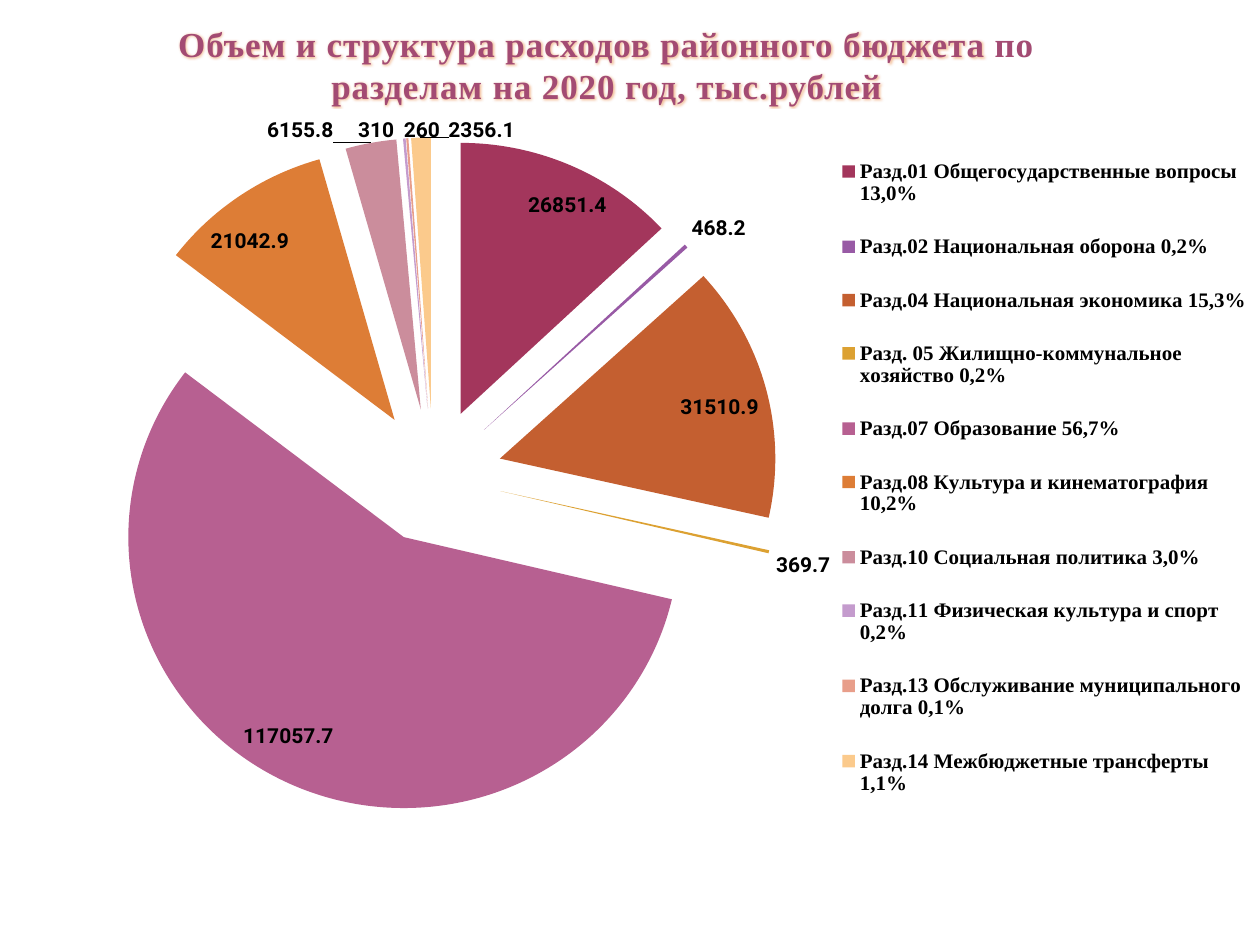
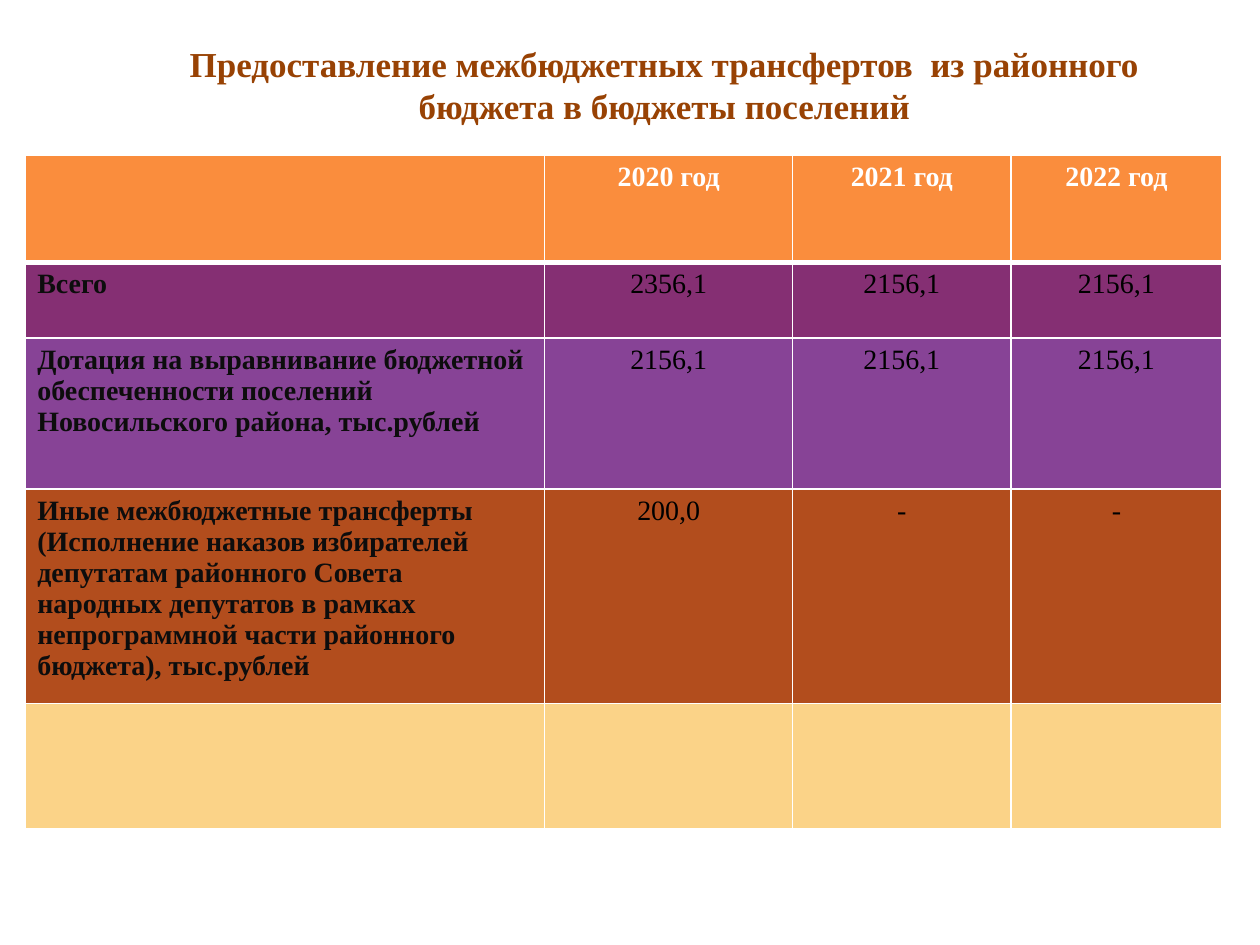
from pptx import Presentation
from pptx.chart.data import CategoryChartData
from pptx.dml.color import RGBColor
from pptx.enum.chart import XL_CHART_TYPE, XL_LABEL_POSITION, XL_LEGEND_POSITION
from pptx.enum.text import MSO_AUTO_SIZE, PP_ALIGN
from pptx.oxml import parse_xml
from pptx.oxml.ns import nsdecls, qn
from pptx.util import Cm, Pt

SERIF = "Times New Roman"
SANS = "Roboto"
WHITE, BLACK, DARK = "FFFFFF", "000000", "0D0D0D"

PARTS = [
    ("Разд.01 Общегосударственные вопросы 13,0%", 26851.4, "A3365C"),
    ("Разд.02 Национальная оборона 0,2%", 468.2, "985AA5"),
    ("Разд.04 Национальная экономика 15,3%", 31510.9, "C45F30"),
    ("Разд. 05 Жилищно-коммунальное хозяйство 0,2%", 369.7, "DCA132"),
    ("Разд.07 Образование 56,7%", 117057.7, "B76091"),
    ("Разд.08 Культура и кинематография 10,2%", 21042.9, "DD7D36"),
    ("Разд.10 Социальная политика 3,0%", 6155.8, "CB8D9C"),
    ("Разд.11 Физическая культура и спорт 0,2%", 310, "C49BCD"),
    ("Разд.13 Обслуживание муниципального долга 0,1%", 260, "E89E8A"),
    ("Разд.14 Межбюджетные трансферты 1,1%", 2356.1, "FBCA8C"),
]

ROWS = [
    (2.16, "FA8D3D", ["", "2020 год", "2021 год", "2022 год"]),
    (1.52, "852F73", ["Всего", "2356,1", "2156,1", "2156,1"]),
    (3.05, "874396", ["Дотация на выравнивание бюджетной обеспеченности поселений "
                      "Новосильского района, тыс.рублей", "2156,1", "2156,1", "2156,1"]),
    (4.3, "B24D1D", ["Иные межбюджетные трансферты (Исполнение наказов избирателей "
                     "депутатам районного Совета народных депутатов в рамках "
                     "непрограммной части районного бюджета), тыс.рублей",
                     "200,0", "-", "-"]),
    (2.53, "FBD388", ["", "", "", ""]),
]
WIDTHS = [10.48, 5, 4.4, 4.25]


def rgb(code):
    return RGBColor.from_string(code)


def line(tag, code, width):
    return parse_xml(
        f'<a:{tag} {nsdecls("a")} w="{Pt(width)}"><a:solidFill>'
        f'<a:srgbClr val="{code}"/></a:solidFill></a:{tag}>')


def place(x, y, w, h, inner=False):
    target = '<c:layoutTarget val="inner"/>' if inner else ""
    return parse_xml(
        f'<c:layout {nsdecls("c")}><c:manualLayout>{target}'
        f'<c:xMode val="edge"/><c:yMode val="edge"/><c:x val="{x}"/>'
        f'<c:y val="{y}"/><c:w val="{w}"/><c:h val="{h}"/>'
        '</c:manualLayout></c:layout>')


class Deck:
    def __init__(self):
        self.file = Presentation()
        self.file.slide_width, self.file.slide_height = Cm(25.4), Cm(19.05)
        self.slide = None

    def page(self):
        self.slide = self.file.slides.add_slide(self.file.slide_layouts[6])

    def style(self, font, size, code, bold, face=SERIF):
        font.name, font.size, font.bold = face, Pt(size), bold
        font.color.rgb = rgb(code)

    def title(self, text, top, width, code, edge, weight, glow=False):
        frame = self.slide.shapes.add_textbox(
            Cm(2.69), Cm(top), Cm(width), Cm(1.96)).text_frame
        frame.word_wrap = True
        frame.auto_size = MSO_AUTO_SIZE.SHAPE_TO_FIT_TEXT
        frame.text = text
        para = frame.paragraphs[0]
        para.alignment = PP_ALIGN.CENTER
        run = para.runs[0]
        self.style(run.font, 20, code, True)
        props = run.font._element
        props.insert(0, line("ln", edge, weight))
        if glow:
            props.set("spc", "50")
            props.insert(2, parse_xml(
                f'<a:effectLst {nsdecls("a")}><a:glow rad="45500">'
                f'<a:srgbClr val="{edge}"><a:alpha val="50000"/></a:srgbClr>'
                '</a:glow></a:effectLst>'))

    def pie(self, parts, left, top, width, height):
        data = CategoryChartData()
        data.categories = [name for name, _, _ in parts]
        data.add_series("Series 1", [value for _, value, _ in parts])
        chart = self.slide.shapes.add_chart(
            XL_CHART_TYPE.PIE, Cm(left), Cm(top), Cm(width), Cm(height), data).chart
        chart.has_title = False
        self.style(chart.font, 18, BLACK, False, SANS)
        area = chart._chartSpace.chart.plotArea
        for old in area.findall(qn("c:layout")):
            area.remove(old)
        area.insert(0, place(0, 0.026, 0.661, 0.914, True))
        self.legend(chart)
        plot = chart.plots[0]
        plot.vary_by_categories = True
        row = plot.series[0]
        for i, (_, _, code) in enumerate(parts):
            fill = row.points[i].format.fill
            fill.solid()
            fill.fore_color.rgb = rgb(code)
        row._element.find(qn("c:dPt")).addprevious(
            parse_xml(f'<c:explosion {nsdecls("c")} val="25"/>'))
        labels = row.data_labels
        labels.show_value = True
        labels.number_format, labels.number_format_is_linked = "General", False
        labels.position = XL_LABEL_POSITION.BEST_FIT
        self.style(labels.font, 12, BLACK, True, SANS)

    def legend(self, chart):
        chart.has_legend = True
        legend = chart.legend
        legend.position = XL_LEGEND_POSITION.RIGHT
        legend.include_in_layout = False
        self.style(legend.font, 12, BLACK, True)
        legend._element.find(qn("c:legendPos")).addnext(place(0.67, 0.015, 0.33, 0.94))

    def table(self, rows, widths, left, top):
        grid = self.slide.shapes.add_table(
            len(rows), len(widths), Cm(left), Cm(top), Cm(sum(widths)),
            Cm(sum(row[0] for row in rows))).table
        grid.first_row = grid.horz_banding = False
        for col, width in zip(grid.columns, widths):
            col.width = Cm(width)
        for r, (height, code, texts) in enumerate(rows):
            grid.rows[r].height = Cm(height)
            for c, text in enumerate(texts):
                self.cell(grid.cell(r, c), text, code, r == 0, c == 0, r == 1)

    def cell(self, cell, text, code, head, first, below):
        cell.fill.solid()
        cell.fill.fore_color.rgb = rgb(code)
        sides = {"lnL": 1, "lnR": 1, "lnT": 3 if below else 1, "lnB": 3 if head else 1}
        for i, (tag, width) in enumerate(sides.items()):
            cell._tc.tcPr.insert(i, line(tag, WHITE, width))
        if not text:
            return
        cell.text_frame.text = text
        para = cell.text_frame.paragraphs[0]
        para.alignment = PP_ALIGN.LEFT if first else PP_ALIGN.CENTER
        ink = WHITE if head else DARK if first else BLACK
        self.style(para.runs[0].font, 16, ink, head or first)


def main():
    deck = Deck()
    deck.page()
    deck.title("Объем и структура расходов районного бюджета по разделам "
               "на 2020 год, тыс.рублей", 0.33, 19.08, "A34B73", "E77F33", 1, True)
    deck.pie(PARTS, 0.51, 2.13, 24.89, 15.19)
    deck.page()
    deck.title("Предоставление межбюджетных трансфертов  из районного бюджета "
               "в бюджеты поселений", 0.74, 21.41, "984204", "B43461", 0.83)
    deck.table(ROWS, WIDTHS, 0.5, 3.13)
    deck.file.save("out.pptx")


if __name__ == "__main__":
    main()
